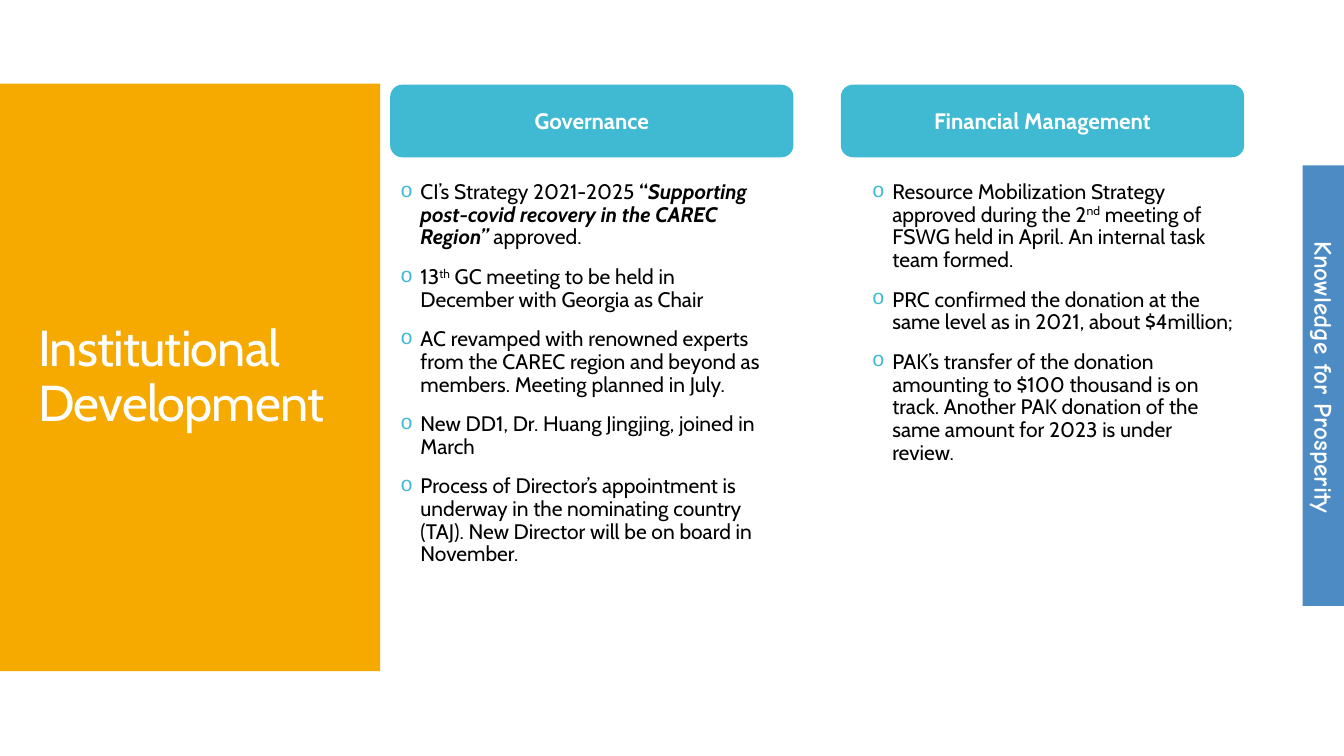
"""Build the Institutional Development slide."""
from lxml import etree
from pptx import Presentation
from pptx import util as u
from pptx.dml.color import RGBColor
from pptx.enum import shapes, text
from pptx.oxml.ns import qn

COLORS = {"amber": "F6AA00", "blue": "005BAB", "teal": "40BAD2",
          "white": "FFFFFF", "black": "000000"}

GOVERNANCE = [
    [("CI’s Strategy 2021-2025 ", {}), ("“", {"bold": True}),
     ("Supporting post-covid recovery in the CAREC Region” ", {"bold": True, "italic": True}),
     ("approved.", {})],
    [("13", {}), ("th", {"raised": True}),
     (" GC meeting to be held in December with Georgia as Chair", {})],
    [("AC revamped with renowned experts from the CAREC region and beyond as members. "
      "Meeting planned in July.", {})],
    [("New DD1, Dr. Huang Jingjing, joined in March", {})],
    [("Process of Director’s appointment is underway in the nominating country (TAJ). "
      "New Director will be on board in November.", {})],
]
FINANCE = [
    [("Resource Mobilization Strategy approved during the 2", {}), ("nd", {"raised": True}),
     (" meeting of FSWG held in April. An internal task team formed.", {})],
    [("PRC confirmed the donation at the same level as in 2021, about $4million;", {})],
    [("PAK’s transfer of the donation amounting to $100 thousand is on track. "
      "Another PAK donation of the same amount for 2023 is under review.", {})],
]


def write(paragraph, words, size=15, font="Cabin", color="black", bold=False,
          italic=False, raised=False, spacing=None):
    """Add one formatted run to a paragraph."""
    run = paragraph.add_run()
    run.text = words
    run.font.size = u.Pt(size)
    run.font.name = font
    run.font.bold = bold
    run.font.italic = italic
    run.font.color.rgb = RGBColor.from_string(COLORS[color])
    properties = run._r.get_or_add_rPr()
    if raised:
        properties.set("baseline", "30000")
    if spacing is not None:
        properties.set("spc", str(round(spacing * 100)))


def place(item, left, top, width, height):
    """Move an item to a position given in inches."""
    item.left, item.top = u.Inches(left), u.Inches(top)
    item.width, item.height = u.Inches(width), u.Inches(height)


class Deck:
    """Hold the style and the current slide."""

    def __init__(self):
        """Open a widescreen deck with a two-column slide."""
        self.presentation = Presentation()
        self.presentation.slide_width = u.Inches(13.33)
        self.presentation.slide_height = u.Inches(7.5)
        self.slide = self.presentation.slides.add_slide(self.presentation.slide_layouts[3])

    def block(self, kind, box, color):
        """Add a flat filled shape."""
        block = self.slide.shapes.add_shape(kind, *map(u.Inches, box))
        block.shadow.inherit = False
        block.fill.solid()
        block.fill.fore_color.rgb = RGBColor.from_string(COLORS[color])
        block.line.fill.background()
        return block

    def band(self, box, color, opacity=100):
        """Add a background band behind the placeholders."""
        band = self.block(shapes.MSO_SHAPE.RECTANGLE, box, color)
        if opacity < 100:
            tint = band._element.spPr.find(qn("a:solidFill"))[0]
            etree.SubElement(tint, qn("a:alpha"), val=str(opacity * 1000))
        self.slide.shapes._spTree.insert(2, band._element)

    def motto(self, words, box):
        """Add the sideways motto."""
        motto = self.slide.shapes.add_textbox(*map(u.Inches, box))
        motto.rotation = 90
        motto.text_frame.word_wrap = False
        line = motto.text_frame.paragraphs[0]
        line.alignment = text.PP_ALIGN.CENTER
        write(line, words, size=18, font="Comic Neue", color="white", bold=True)

    def title(self, words, box):
        """Fill the title placeholder."""
        title = self.slide.shapes.title
        place(title, *box)
        frame = title.text_frame
        frame.auto_size = text.MSO_AUTO_SIZE.NONE
        frame.vertical_anchor = text.MSO_ANCHOR.MIDDLE
        line = frame.paragraphs[0]
        line.alignment = text.PP_ALIGN.LEFT
        line.line_spacing = 0.9
        write(line, words, size=36, color="white", spacing=-0.6)

    def header(self, words, box):
        """Add a rounded column header."""
        header = self.block(shapes.MSO_SHAPE.ROUNDED_RECTANGLE, box, "teal")
        header.text_frame.vertical_anchor = text.MSO_ANCHOR.MIDDLE
        line = header.text_frame.paragraphs[0]
        line.alignment = text.PP_ALIGN.CENTER
        write(line, words, size=16, color="white", bold=True)

    def bullets(self, index, items, box):
        """Fill a body placeholder with a bulleted list."""
        body = self.slide.placeholders[index]
        place(body, *box)
        frame = body.text_frame
        frame.auto_size = text.MSO_AUTO_SIZE.NONE
        for number, runs in enumerate(items):
            line = frame.add_paragraph() if number else frame.paragraphs[0]
            self.bullet(line)
            line.line_spacing = 0.9
            line.space_before = u.Pt(12 if number else 0)
            for words, style in runs:
                write(line, words, **style)

    def bullet(self, line):
        """Give a paragraph a hanging round bullet."""
        properties = line._p.get_or_add_pPr()
        properties.set("marL", str(u.Inches(0.2)))
        properties.set("indent", str(u.Inches(-0.2)))
        tint = etree.SubElement(properties, qn("a:buClr"))
        etree.SubElement(tint, qn("a:srgbClr"), val=COLORS["teal"])
        etree.SubElement(properties, qn("a:buFont"), typeface="Courier New")
        etree.SubElement(properties, qn("a:buChar"), char="o")


def main():
    """Build and save the slide."""
    deck = Deck()
    deck.band((0, 0.83, 3.77, 5.83), "amber")
    deck.band((12.92, 1.64, 0.42, 4.37), "blue", opacity=70)
    deck.motto("Knowledge for Prosperity", (11.68, 3.54, 2.91, 0.4))
    deck.title("Institutional Development", (0.28, 1.23, 3.22, 5.03))
    columns = [("Governance", GOVERNANCE, 3.87, 3.87, 4.33),
               ("Financial Management", FINANCE, 8.34, 8.55, 2.95)]
    for index, (heading, items, header_left, list_left, height) in enumerate(columns, 1):
        deck.header(heading, (header_left, 0.84, 4, 0.72))
        deck.bullets(index, items, (list_left, 1.75, 3.8, height))
    deck.presentation.save("out.pptx")


if __name__ == "__main__":
    main()
